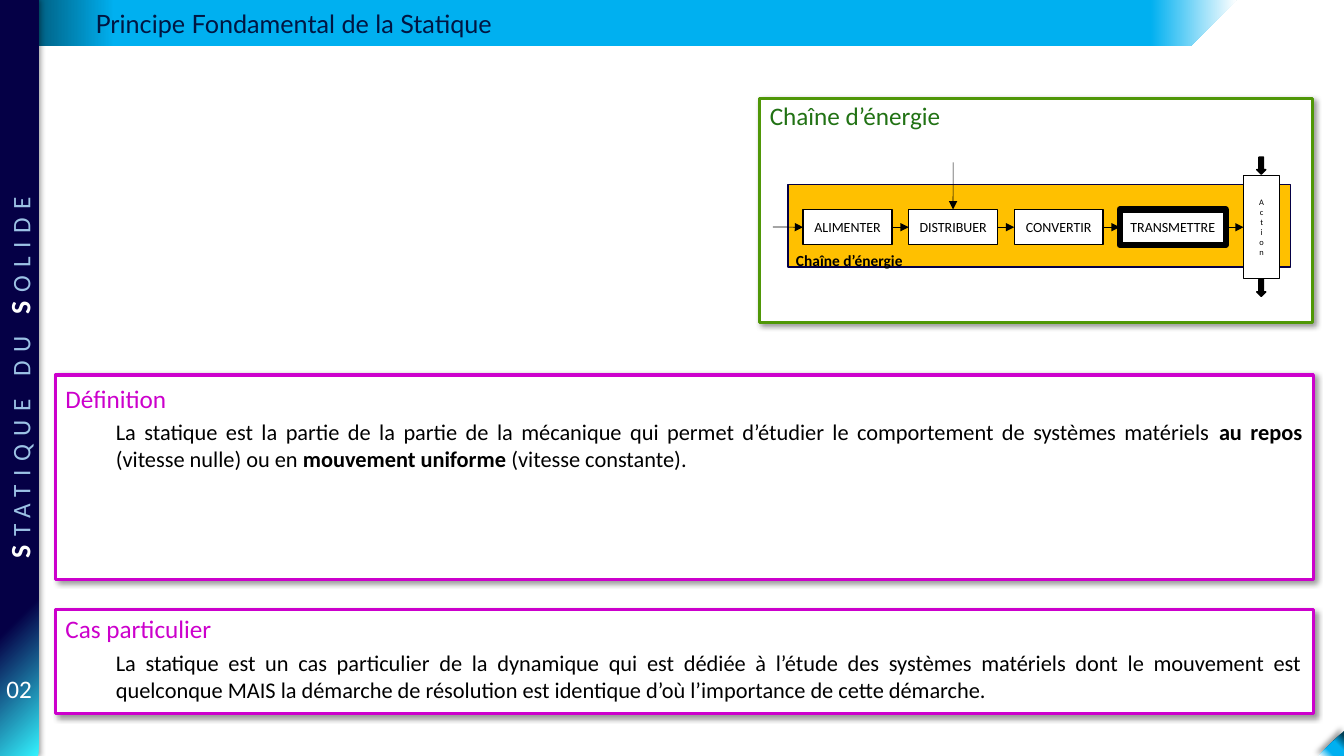
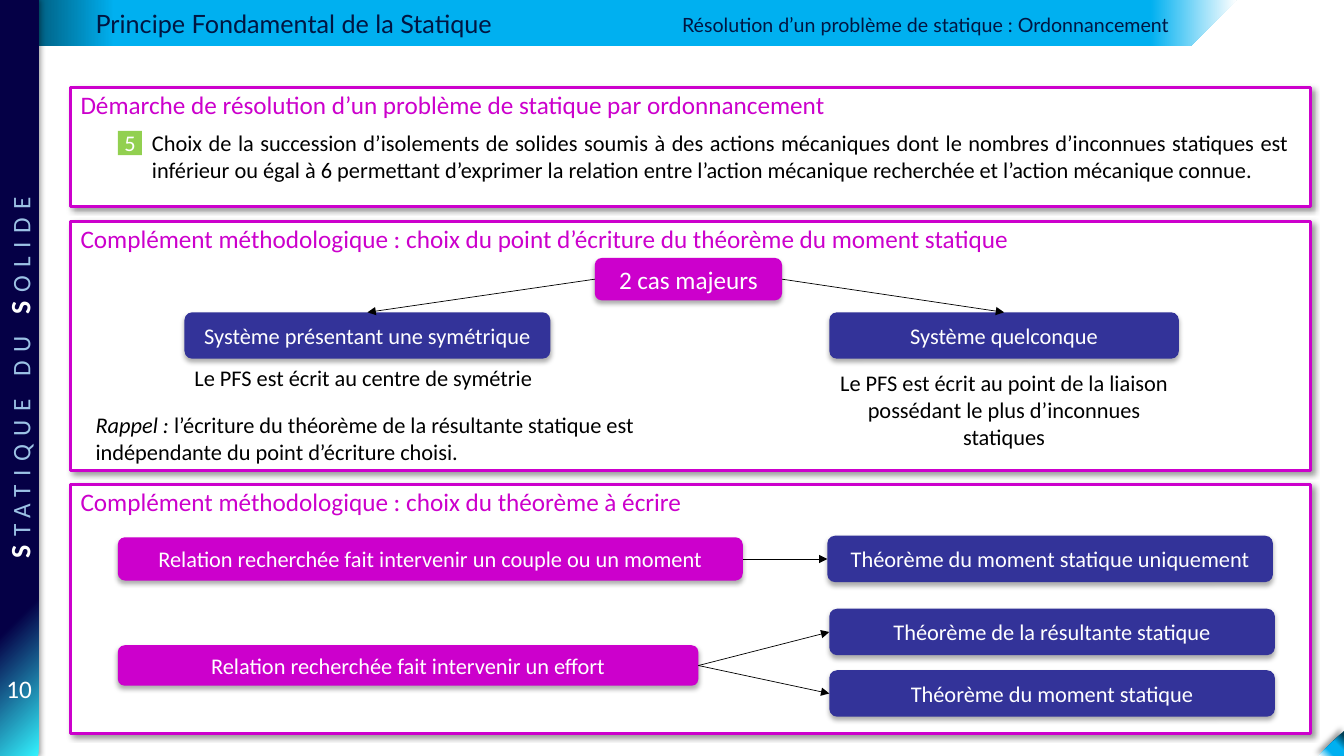
"""Builds two lesson slides on the fundamental principle of statics."""
from lxml import etree
from pptx import Presentation
from pptx.dml.color import RGBColor
from pptx.enum.shapes import MSO_CONNECTOR, MSO_SHAPE
from pptx.enum.text import MSO_ANCHOR, PP_ALIGN
from pptx.oxml.ns import qn
from pptx.util import Cm, Pt

RECT, ROUND = MSO_SHAPE.RECTANGLE, MSO_SHAPE.ROUNDED_RECTANGLE
SOFT, DOWN = MSO_SHAPE.FLOWCHART_ALTERNATE_PROCESS, MSO_SHAPE.DOWN_ARROW
LINE = MSO_CONNECTOR.STRAIGHT
LEFT, MID, RIGHT, BOTH = PP_ALIGN.LEFT, PP_ALIGN.CENTER, PP_ALIGN.RIGHT, PP_ALIGN.JUSTIFY
TOP, HALF = MSO_ANCHOR.TOP, MSO_ANCHOR.MIDDLE

BLACK, WHITE = RGBColor(0, 0, 0), RGBColor(255, 255, 255)
DEEP, TEAL = RGBColor(0x05, 0x00, 0x46), RGBColor(0x00, 0x3E, 0x54)
CYAN, SKY = RGBColor(0x33, 0xF3, 0xFF), RGBColor(0x00, 0xB0, 0xF0)
PALE, NAVY = RGBColor(0x9C, 0xC2, 0xE5), RGBColor(0x00, 0x16, 0x42)
PINK, BLUE = RGBColor(0xCC, 0x00, 0xCC), RGBColor(0x33, 0x33, 0x99)
GREEN, PINE = RGBColor(0x4F, 0x97, 0x07), RGBColor(0x21, 0x72, 0x14)
GOLD, LIME = RGBColor(0xFF, 0xC0, 0x00), RGBColor(0x92, 0xD0, 0x50)

WIDE, HIGH = 33.87, 19.05
RAIL = 0.97
PAD = (0.25, 0.13)
FLAT = (0, 0)

BAND = [(0.1, 0), (31.17, 0), (30, 1.17), (0.1, 1.17)]
BANDFILL = ([(0, TEAL), (9, SKY), (93, SKY), (100, WHITE)], 0)
RAILFILL = ([(0, CYAN), (20, DEEP)], 225)
FOLD = [(WIDE, 18.42), (33.23, HIGH), (WIDE, HIGH)]
FOLDFILL = ([(10, TEAL), (40, SKY), (69, SKY), (100, WHITE)], 135)

# blur, distance, direction and opacity
RAILSHADE, FOLDSHADE = (4, 1, 0, 40), (4, 3, 225, 40)
BOXSHADE, NODESHADE = (4, 2, 45, 40), (3.5, 2.2, 90, 32)

TITLE = "Principe Fondamental de la Statique"
TOPIC = "Résolution d’un problème de statique : Ordonnancement"
COURSE = [("S", "b", 20, WHITE), ("TATIQUE DU ", "", 18, PALE),
          ("S", "b", 20, WHITE), ("OLIDE", "", 18, PALE)]

INTRO = [
    ((1.4, 9.45, 31.7, 5.16), "Définition", 0.08, PINK, PINK),
    ((19.15, 2.49, 13.92, 5.64), "Chaîne d’énergie", -0.08, GREEN, PINE),
    ((1.4, 15.37, 31.7, 2.62), "Cas particulier", -0.05, PINK, PINK),
]
INTROTEXT = [
    ((2.67, 10.41, 30.4, 1.63), BOTH, [
        ("La statique est la partie de la partie de la mécanique qui permet "
         "d’étudier le comportement de systèmes matériels ", ""),
        ("au repos ", "b"), ("(vitesse nulle) ou en ", ""),
        ("mouvement uniforme ", "b"), ("(vitesse constante).", "")]),
    ((2.67, 16.23, 30.4, 1.63), BOTH, [
        ("La statique est un cas particulier de la dynamique qui est dédiée à "
         "l’étude des systèmes matériels dont le mouvement est quelconque MAIS "
         "la démarche de résolution est identique d’où l’importance de cette "
         "démarche.", "")]),
]
STEPS = [("ALIMENTER", 2.24, 1), ("DISTRIBUER", 2.24, 1),
         ("CONVERTIR", 2.24, 1), ("TRANSMETTRE", 2.67, 4.5)]

METHOD = [
    ((1.78, 2.21, 31.24, 3),
     "Démarche de résolution d’un problème de statique par ordonnancement"),
    ((1.78, 5.59, 31.24, 6.27),
     "Complément méthodologique : choix du point d’écriture du théorème du moment statique"),
    ((1.78, 12.22, 31.24, 6.27),
     "Complément méthodologique : choix du théorème à écrire"),
]
METHODTEXT = [
    ((3.58, 3.12, 29.16, 1.63), BOTH, [
        ("Choix de la succession d’isolements de solides soumis à des actions "
         "mécaniques dont le nombres d’inconnues statiques est inférieur ou égal "
         "à 6 permettant d’exprimer la relation entre l’action mécanique "
         "recherchée et l’action mécanique connue.", "")]),
    ((4.65, 9.04, 9.22, 0.94), LEFT, [("Le PFS est écrit au centre de symétrie", "")]),
    ((20.9, 9.17, 8.81, 2.31), MID, [
        ("Le PFS est écrit au point de la liaison possédant le plus "
         "d’inconnues statiques", "")]),
    ((2.16, 10.24, 14.55, 1.63), LEFT, [
        ("Rappel :", "i"),
        (" l’écriture du théorème de la résultante statique est "
         "indépendante du point d’écriture choisi.", "")]),
]
NODES = {
    "cases": (SOFT, (14.99, 6.5, 4.72, 1.07), "2 cas majeurs", 18),
    "even": (ROUND, (4.65, 7.87, 9.22, 1.17), "Système présentant une symétrique", 16),
    "other": (ROUND, (20.9, 7.87, 8.81, 1.17), "Système quelconque", 16),
    "torque": (SOFT, (2.97, 13.54, 15.75, 1.09),
               "Relation recherchée fait intervenir un couple ou un moment", 16),
    "only": (ROUND, (20.85, 13.5, 11.23, 1.17),
             "Théorème du moment statique uniquement", 16),
    "force": (SOFT, (2.97, 16.26, 14.63, 1.02),
              "Relation recherchée fait intervenir un effort", 16),
    "result": (ROUND, (20.9, 15.34, 11.23, 1.17),
               "Théorème de la résultante statique", 16),
    "moment": (ROUND, (20.9, 16.89, 11.23, 1.17),
               "Théorème du moment statique", 16),
}
LINKS = [("cases", 1, "even", 0), ("cases", 3, "other", 0),
         ("torque", 3, "only", 1), ("force", 3, "result", 1),
         ("force", 3, "moment", 1)]


def add(parent, tag, **attrs):
    node = etree.SubElement(parent, qn(tag))
    for key, value in attrs.items():
        node.set(key, str(value))
    return node


def paint(shape, fill, line=None, width=1, shade=None):
    if isinstance(fill, RGBColor):
        shape.fill.solid()
        shape.fill.fore_color.rgb = fill
    else:
        stops, angle = fill
        shape.fill.gradient()
        shape.fill.gradient_angle = -angle % 360
        ramp = shape.element.find(".//" + qn("a:gsLst"))
        for old in list(ramp):
            ramp.remove(old)
        for spot, color in stops:
            add(add(ramp, "a:gs", pos=spot * 1000), "a:srgbClr", val=color)
    if line is None:
        shape.line.fill.background()
    else:
        shape.line.color.rgb = line
        shape.line.width = Pt(width)
    shape.shadow.inherit = False
    if shade:
        blur, dist, turn, alpha = shade
        outer = add(shape.element.find(".//" + qn("a:effectLst")), "a:outerShdw",
                    blurRad=Pt(blur), dist=Pt(dist), dir=turn * 60000,
                    algn="ctr", rotWithShape=0)
        add(add(outer, "a:srgbClr", val="000000"), "a:alpha", val=alpha * 1000)


def write(shape, runs, align=LEFT, size=16, color=BLACK, font="Calibri",
          pad=PAD, anchor=TOP):
    frame = shape.text_frame
    frame.word_wrap = True
    frame.vertical_anchor = anchor
    frame.margin_left = frame.margin_right = Cm(pad[0])
    frame.margin_top = frame.margin_bottom = Cm(pad[1])
    para = frame.paragraphs[0]
    para.alignment = align
    for words, style, *look in runs:
        run = para.add_run()
        run.text = words
        run.font.name = font
        run.font.bold, run.font.italic = "b" in style, "i" in style
        points, tint = look or (size, color)
        run.font.size = Pt(points)
        run.font.color.rgb = tint


def label(slide, box, words, *args, **look):
    runs = [(words, "")] if isinstance(words, str) else words
    write(slide.shapes.add_textbox(*map(Cm, box)), runs, *args, **look)


def block(slide, kind, box, fill, words="", size=16, color=WHITE, **look):
    shape = slide.shapes.add_shape(kind, *map(Cm, box))
    paint(shape, fill, **look)
    if words:
        write(shape, [(words, "")], MID, size, color, pad=FLAT, anchor=HALF)
    return shape


def outline(slide, spots, fill, shade=None):
    spots = [(Cm(x), Cm(y)) for x, y in spots]
    pen = slide.shapes.build_freeform(*spots[0])
    pen.add_line_segments(spots[1:], close=True)
    paint(pen.convert_to_shape(), fill, shade=shade)


def link(slide, goal, site, base=None, exit=3, spot=FLAT):
    x, y = map(Cm, spot)
    wire = slide.shapes.add_connector(LINE, x, y, x, y)
    if base is not None:
        wire.begin_connect(base, exit)
    wire.end_connect(goal, site)
    wire.line.color.rgb = BLACK
    wire.line.width = Pt(0.5)
    add(wire.line._get_or_add_ln(), "a:tailEnd", type="triangle")
    add(wire.element.spPr, "a:effectLst")


def panel(slide, box, title, drop=-0.1, edge=PINK, tint=PINK):
    shape = block(slide, ROUND, box, WHITE, line=edge, width=2.25, shade=BOXSHADE)
    shape.adjustments[0] = 0
    x, y, w, _ = box
    label(slide, (x, y + drop, w, 1.02), title, size=18, color=tint)


def turn(shape, mode):
    shape.text_frame._txBody.bodyPr.set("vert", mode)


def frame(slide, layout):
    outline(slide, BAND, BANDFILL)
    rail = block(slide, RECT, (0, 0, RAIL, HIGH), RAILFILL, shade=RAILSHADE)
    write(rail, COURSE, MID, pad=FLAT, anchor=HALF)
    turn(rail, "vert270")
    for run in rail.text_frame.paragraphs[0].runs:
        run.font._element.set("spc", "600")
    outline(slide, FOLD, FOLDFILL, FOLDSHADE)
    label(slide, (2.16, 0.08, 12.42, 1.07), TITLE, size=18, color=NAVY, font="Lato")
    for old in list(layout.placeholders):
        layout.shapes.element.remove(old.element)
    for shape in list(slide.shapes):
        layout.shapes.element.append(shape.element)


def number(slide, digits):
    label(slide, (0, 16.84, RAIL, 1.02), digits, MID, 18, WHITE, pad=(0, 0.13))


def chain(slide):
    block(slide, RECT, (19.86, 4.65, 12.67, 2.08), GOLD, line=DEEP)
    boxes = [block(slide, RECT, (20.24 + 2.66 * i, 5.28, w, 0.89), WHITE, name, 10,
                   BLACK, line=BLACK, width=edge)
             for i, (name, w, edge) in enumerate(STEPS)]
    act = block(slide, RECT, (31.34, 4.43, 0.91, 2.59), WHITE, "Action", 6, BLACK,
                line=BLACK)
    turn(act, "wordArtVert")
    boxes.append(act)
    link(slide, boxes[0], 1, spot=(19.48, 5.72))
    link(slide, boxes[1], 0, spot=(24.02, 4.09))
    for base, goal in zip(boxes, boxes[1:]):
        link(slide, goal, 1, base)
    label(slide, (19.81, 6.2, 4.88, 0.74), [("Chaîne d’énergie", "b")], size=11)
    for y in (3.96, 7.04):
        block(slide, DOWN, (31.67, y, 0.23, 0.43), BLACK, line=BLACK)


def method(slide):
    label(slide, (13.34, 0.2, 16.38, 0.86), TOPIC, RIGHT, 14, NAVY, "Lato")
    for box, title in METHOD:
        panel(slide, box, title)
    block(slide, RECT, (2.97, 3.3, 0.61, 0.61), LIME, "5")
    nodes = {}
    for key, (kind, box, words, size) in NODES.items():
        fill = PINK if kind == SOFT else BLUE
        nodes[key] = block(slide, kind, box, fill, words, size, shade=NODESHADE)
    for base, exit, goal, site in LINKS:
        link(slide, nodes[goal], site, nodes[base], exit)


def main():
    deck = Presentation()
    deck.slide_width, deck.slide_height = Cm(WIDE), Cm(HIGH)
    layout = deck.slide_layouts[6]
    first, second = (deck.slides.add_slide(layout) for _ in range(2))
    frame(first, layout)
    for item in INTRO:
        panel(first, *item)
    chain(first)
    method(second)
    pages = [(first, "02", INTROTEXT), (second, "10", METHODTEXT)]
    for slide, digits, texts in pages:
        number(slide, digits)
        for box, align, runs in texts:
            label(slide, box, runs, align)
    deck.save("out.pptx")


if __name__ == "__main__":
    main()
